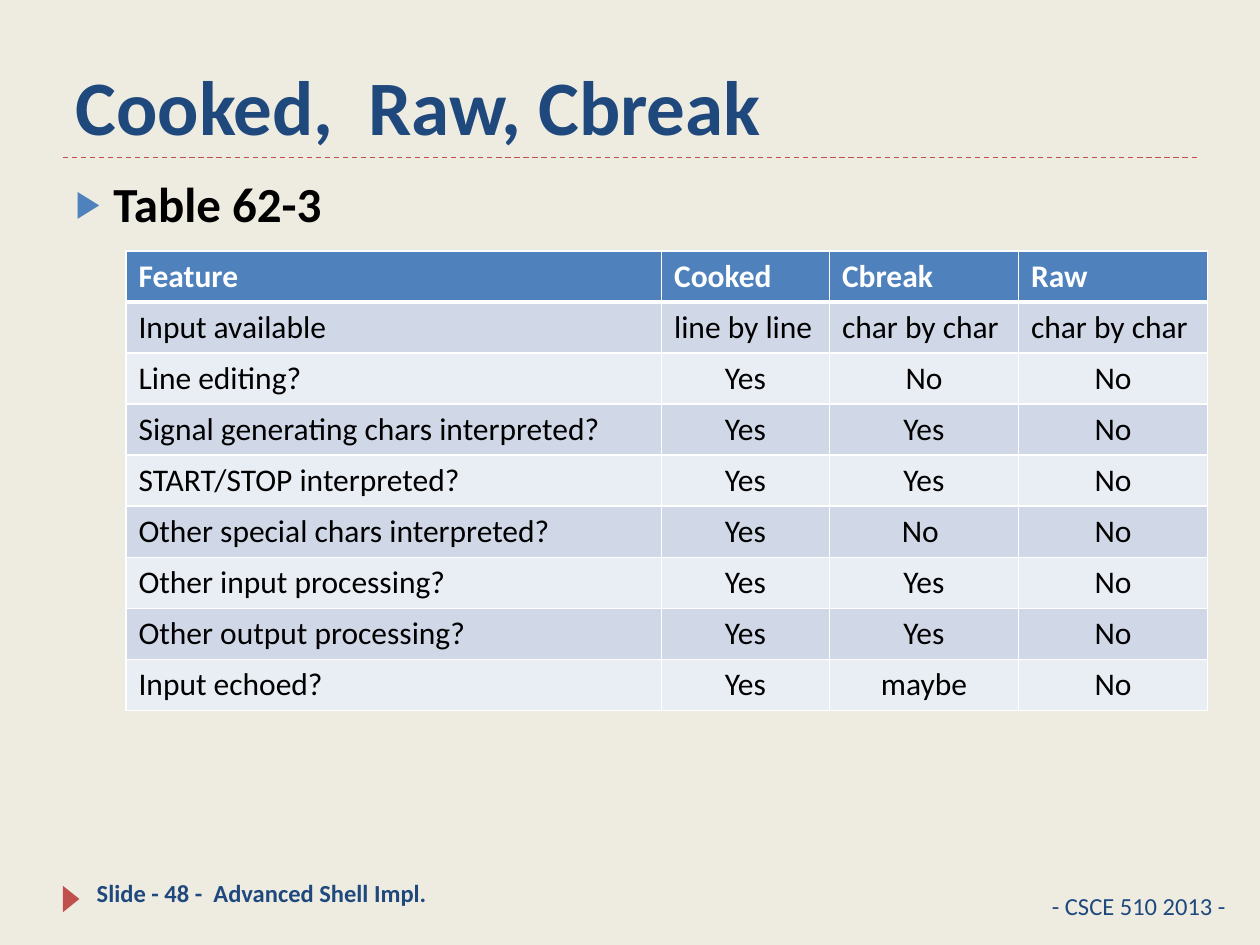
from lxml.etree import SubElement
from pptx import Presentation
from pptx.dml.color import RGBColor
from pptx.enum.dml import MSO_LINE
from pptx.enum.shapes import MSO_CONNECTOR, MSO_SHAPE
from pptx.enum.text import MSO_ANCHOR, MSO_AUTO_SIZE, PP_ALIGN
from pptx.oxml import parse_xml
from pptx.oxml.ns import nsdecls, qn
from pptx.util import Pt

TITLE = "Cooked,  Raw, Cbreak"
LEAD = "Table 62-3"
NOTES = [
    ("- CSCE 510 2013 -", (594, 505.4, 120.2, 28.8), False),
    ("Slide - 48 -  Advanced Shell Impl.", (48.2, 498.2, 210.2, 28.8), True),
]
ROWS = [
    ("Feature", "Cooked", "Cbreak", "Raw"),
    ("Input available", "line by line", "char by char", "char by char"),
    ("Line editing?", "Yes", "No", "No"),
    ("Signal generating chars interpreted?", "Yes", "Yes", "No"),
    ("START/STOP interpreted?", "Yes", "Yes", "No"),
    ("Other special chars interpreted?", "Yes", "No ", "No"),
    ("Other input processing?", "Yes", "Yes", "No"),
    ("Other output processing?", "Yes", "Yes", "No"),
    ("Input echoed?", "Yes", "maybe", "No"),
]
COLS = [306, 96, 108, 108]
ROW_H = 29.2

FONT = "Calibri"
CREAM = RGBColor(0xEE, 0xEC, 0xE1)
NAVY = RGBColor(0x1F, 0x49, 0x7D)
BLUE = RGBColor(0x4F, 0x81, 0xBD)
RED = RGBColor(0xC0, 0x50, 0x4D)
BLACK = RGBColor(0, 0, 0)
WHITE = RGBColor(255, 255, 255)
BANDS = [RGBColor(0xE9, 0xED, 0xF4), RGBColor(0xD0, 0xD8, 0xE8)]


def write(frame, text, size=18, color=BLACK, bold=False, align=PP_ALIGN.LEFT):
    """Put one formatted line of text in a frame and return its paragraph."""
    para = frame.paragraphs[0]
    para.alignment = align
    run = para.add_run()
    run.text = text
    font = run.font
    font.name, font.size, font.bold = FONT, Pt(size), bold
    font.color.rgb = color
    return para


def place(shape, left, top, width, height):
    """Move and size a shape in points."""
    shape.left, shape.top = Pt(left), Pt(top)
    shape.width, shape.height = Pt(width), Pt(height)


def bullet(para):
    """Give a paragraph a hanging blue arrow bullet."""
    props = para._p.get_or_add_pPr()
    props.set("marL", str(Pt(21.6)))
    props.set("indent", str(-Pt(21.6)))
    tint = SubElement(props, qn("a:buClr"))
    SubElement(tint, qn("a:srgbClr"), val=str(BLUE))
    SubElement(props, qn("a:buSzPct"), val="76000")
    SubElement(props, qn("a:buChar"), char="▶")


def edge(cell, top, bottom):
    """Draw white cell borders with the given top and bottom widths."""
    props = cell._tc.get_or_add_tcPr()
    sides = [("L", 1), ("R", 1), ("T", top), ("B", bottom)]
    for spot, (side, width) in enumerate(sides):
        props.insert(spot, parse_xml(
            f'<a:ln{side} {nsdecls("a")} w="{Pt(width)}"><a:solidFill>'
            f'<a:srgbClr val="{WHITE}"/></a:solidFill></a:ln{side}>'))


def add_rule(slide):
    """Add the dashed rule under the title."""
    rule = slide.shapes.add_connector(
        MSO_CONNECTOR.STRAIGHT, Pt(36), Pt(90), Pt(684), Pt(90))
    rule.line.color.rgb = RED
    rule.line.width = Pt(0.75)
    rule.line.dash_style = MSO_LINE.DASH
    SubElement(rule._element.spPr, qn("a:effectLst"))


def add_mark(slide):
    """Add the red footer arrow."""
    mark = slide.shapes.add_shape(
        MSO_SHAPE.ISOSCELES_TRIANGLE, Pt(33.1), Pt(509), Pt(15.1), Pt(9.4))
    mark.rotation = 90
    mark.shadow.inherit = False
    mark.fill.solid()
    mark.fill.fore_color.rgb = RED
    mark.line.fill.background()


def add_grid(slide):
    """Add the table of terminal modes."""
    grid = slide.shapes.add_table(
        len(ROWS), len(COLS), Pt(72), Pt(143.3),
        Pt(sum(COLS)), Pt(ROW_H * len(ROWS))).table
    for col, width in zip(grid.columns, COLS):
        col.width = Pt(width)
    for r, texts in enumerate(ROWS):
        grid.rows[r].height = Pt(ROW_H)
        head = r == 0
        for c, text in enumerate(texts):
            cell = grid.cell(r, c)
            cell.fill.solid()
            cell.fill.fore_color.rgb = BLUE if head else BANDS[r % 2]
            edge(cell, 3 if r == 1 else 1, 3 if head else 1)
            write(cell.text_frame, text, bold=head,
                  color=WHITE if head else BLACK,
                  align=PP_ALIGN.CENTER if r > 1 and c else PP_ALIGN.LEFT)


def main():
    """Build and save the slide."""
    deck = Presentation()
    deck.slide_width, deck.slide_height = Pt(720), Pt(540)
    slide = deck.slides.add_slide(deck.slide_layouts[1])
    slide.background.fill.solid()
    slide.background.fill.fore_color.rgb = CREAM
    title, body = slide.placeholders
    add_rule(slide)
    add_mark(slide)

    place(title, 36, 12.2, 648, 77.8)
    title.text_frame.vertical_anchor = MSO_ANCHOR.BOTTOM
    title.text_frame.auto_size = MSO_AUTO_SIZE.NONE
    write(title.text_frame, TITLE, size=44, color=NAVY, bold=True)

    for text, box, bold in NOTES:
        note = slide.shapes.add_textbox(*map(Pt, box))
        note.text_frame.word_wrap = True
        write(note.text_frame, text, size=14, color=NAVY, bold=bold)

    place(body, 36, 95.8, 648, 388.8)
    body.text_frame.auto_size = MSO_AUTO_SIZE.NONE
    lead = write(body.text_frame, LEAD, size=28, bold=True)
    lead.space_before = Pt(6)
    bullet(lead)

    add_grid(slide)
    deck.save("out.pptx")


if __name__ == "__main__":
    main()
